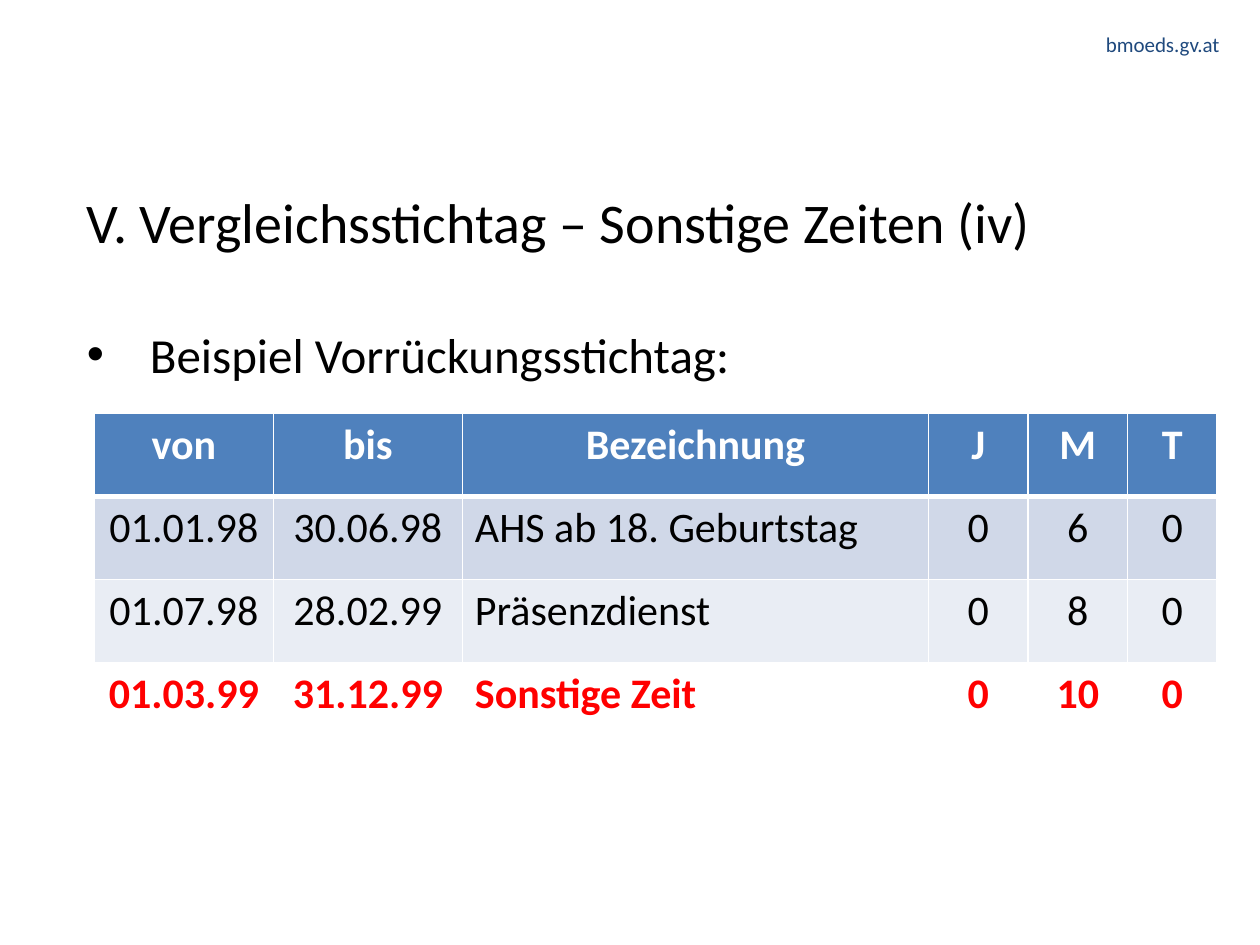
from lxml import etree
from pptx import Presentation
from pptx.dml.color import RGBColor
from pptx.enum.text import MSO_ANCHOR, MSO_AUTO_SIZE, PP_ALIGN
from pptx.oxml.ns import qn
from pptx.util import Inches, Pt

LEFT, MID, RIGHT = PP_ALIGN.LEFT, PP_ALIGN.CENTER, PP_ALIGN.RIGHT
TOP = MSO_ANCHOR.TOP
FIXED = MSO_AUTO_SIZE.NONE


def write(frame, text, size, color="000000", bold=False, align=LEFT,
          line=None, indent=None, bullet=None):
    para = frame.paragraphs[0]
    para.alignment = align
    props = para._p.get_or_add_pPr()
    if indent:
        props.set("marL", str(Inches(indent)))
        props.set("indent", str(Inches(-indent)))
    if bullet:
        etree.SubElement(props, qn("a:buFont")).set("typeface", "Arial")
        etree.SubElement(props, qn("a:buChar")).set("char", bullet)
    if line:
        para.line_spacing = Pt(line)
        para.space_before = Pt(0)
    run = para.add_run()
    run.text = text
    run.font.name = "Calibri"
    run.font.size = Pt(size)
    run.font.bold = bold
    run.font.color.rgb = RGBColor.from_string(color)


def border(cell, side, width):
    edge = etree.SubElement(cell._tc.get_or_add_tcPr(), qn("a:ln" + side))
    edge.set("w", str(Pt(width)))
    fill = etree.SubElement(edge, qn("a:solidFill"))
    etree.SubElement(fill, qn("a:srgbClr")).set("val", "FFFFFF")


deck = Presentation()
deck.slide_width, deck.slide_height = Inches(10), Inches(7.5)
slide = deck.slides.add_slide(deck.slide_layouts[0])

# Title and bullet line
title, body = slide.placeholders
for holder, top, width, height in ((title, 1.39, 8.73, 1.15),
                                   (body, 2.41, 9.13, 4.65)):
    holder.left, holder.top = Inches(0.59), Inches(top)
    holder.width, holder.height = Inches(width), Inches(height)
    holder.text_frame.vertical_anchor = TOP
    holder.text_frame.auto_size = FIXED
write(title.text_frame, "V. Vergleichsstichtag – Sonstige Zeiten (iv)", 32,
      line=42, indent=0.56)
write(body.text_frame, "Beispiel Vorrückungsstichtag:", 28,
      line=42, indent=0.5, bullet="•")

# Web address at the top right
site = slide.shapes.add_textbox(Inches(7.27), Inches(0.25),
                                Inches(2.41), Inches(0.2)).text_frame
site.word_wrap = True
site.margin_left = site.margin_right = site.margin_top = site.margin_bottom = 0
write(site, "bmoeds.gv.at", 12, "1F497D", align=RIGHT)

# Table of periods: fill, text colour, bold, cell texts
rows = [
    ("4F81BD", "FFFFFF", True, ["von", "bis", "Bezeichnung", "J", "M", "T"]),
    ("D0D8E8", "000000", False,
     ["01.01.98", "30.06.98", "AHS ab 18. Geburtstag", "0", "6", "0"]),
    ("E9EDF4", "000000", False,
     ["01.07.98", "28.02.99", "Präsenzdienst", "0", "8", "0"]),
    (None, "FF0000", True,
     ["01.03.99", "31.12.99", "Sonstige Zeit", "0", "10", "0"]),
]
widths = [1.42, 1.5, 3.7, 0.79, 0.79, 0.71]
table = slide.shapes.add_table(len(rows), len(widths), Inches(0.75),
                               Inches(3.28), Inches(8.9), Inches(2.64)).table
for col, width in zip(table.columns, widths):
    col.width = Inches(width)
for r, (fill, color, bold, texts) in enumerate(rows):
    table.rows[r].height = Inches(0.66)
    for c, text in enumerate(texts):
        cell = table.cell(r, c)
        for side in "LRTB":
            heavy = (r, side) in ((0, "B"), (1, "T"))
            border(cell, side, 3 if heavy else 1)
        if fill:
            cell.fill.solid()
            cell.fill.fore_color.rgb = RGBColor.from_string(fill)
        else:
            cell.fill.background()
        write(cell.text_frame, text, 24, color, bold,
              LEFT if c == 2 and r else MID)

deck.save("out.pptx")
